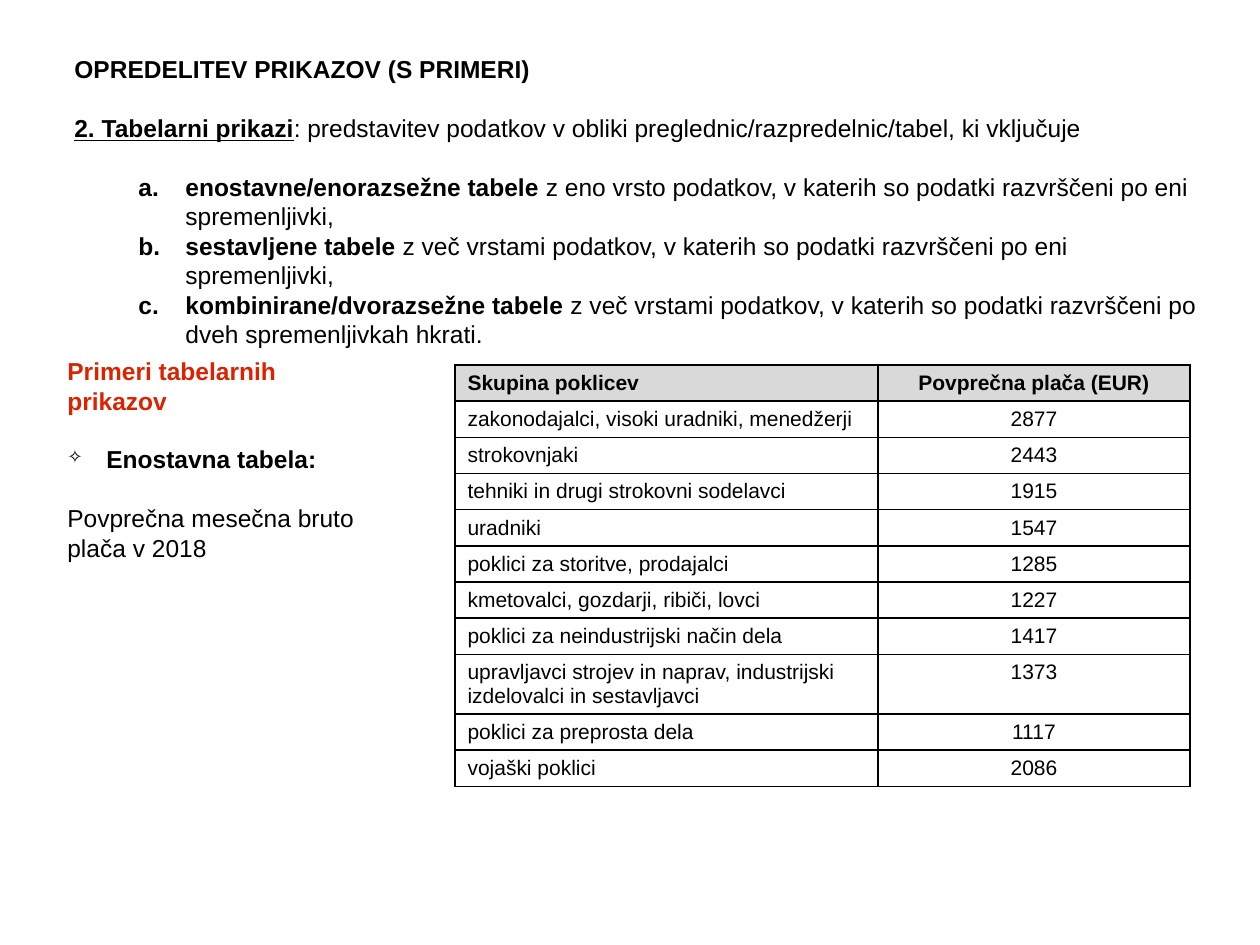
import pptx
import pptx.dml.color
import pptx.enum.text
import pptx.oxml
import pptx.oxml.ns
import pptx.util

SCALE = 914400 / 126  # EMU in one px
BLACK = pptx.dml.color.RGBColor(0x00, 0x00, 0x00)
RED = pptx.dml.color.RGBColor(0xDC, 0x23, 0x00)
GREY = pptx.dml.color.RGBColor(0xD9, 0xD9, 0xD9)

BODY = {"name": "Arial", "size": pptx.util.Pt(14), "bold": False}
STRONG = {**BODY, "bold": True}
UNDERLINED = {**STRONG, "underline": True}
CELL = {**BODY, "size": pptx.util.Pt(12)}
HEADER = {**CELL, "bold": True}
LINE_GAP = pptx.util.Pt(16.8)

LETTERS = ['<a:buFont {ns} typeface="+mj-lt"/>', '<a:buAutoNum {ns} type="alphaLcPeriod"/>']
STAR = ['<a:buSzPct {ns} val="75000"/>', '<a:buChar {ns} char="✧"/>']

KINDS = [
    ("enostavne/enorazsežne tabele ",
     "z eno vrsto podatkov, v katerih so podatki razvrščeni po eni spremenljivki,"),
    ("sestavljene tabele ",
     "z več vrstami podatkov, v katerih so podatki razvrščeni po eni spremenljivki,"),
    ("kombinirane/dvorazsežne tabele",
     " z več vrstami podatkov, v katerih so podatki razvrščeni po dveh spremenljivkah hkrati."),
]
SALARIES = [
    ("Skupina poklicev", "Povprečna plača (EUR)"),
    ("zakonodajalci, visoki uradniki, menedžerji", "2877"),
    ("strokovnjaki", "2443"),
    ("tehniki in drugi strokovni sodelavci", "1915"),
    ("uradniki", "1547"),
    ("poklici za storitve, prodajalci", "1285"),
    ("kmetovalci, gozdarji, ribiči, lovci", "1227"),
    ("poklici za neindustrijski način dela", "1417"),
    ("upravljavci strojev in naprav, industrijski izdelovalci in sestavljavci", "1373"),
    ("poklici za preprosta dela", "1117"),
    ("vojaški poklici", "2086"),
]


def px(length):
    return pptx.util.Emu(round(length * SCALE))


def xml(template):
    return pptx.oxml.parse_xml(template.format(ns=pptx.oxml.ns.nsdecls("a")))


def write(paragraph, text, style, color=BLACK):
    run = paragraph.add_run()
    run.text = text
    for attribute, value in style.items():
        setattr(run.font, attribute, value)
    run.font.color.rgb = color


def add_frame(slide, box):
    frame = slide.shapes.add_textbox(*map(px, box)).text_frame
    frame.word_wrap = True
    frame.auto_size = pptx.enum.text.MSO_AUTO_SIZE.SHAPE_TO_FIT_TEXT
    return frame


def add_paragraph(frame, gap_before=False):
    paragraph = frame.add_paragraph()
    if gap_before:
        paragraph.space_before = LINE_GAP
    return paragraph


def add_bullet(paragraph, marker, margin, hanging):
    properties = paragraph._p.get_or_add_pPr()
    properties.set("marL", str(px(margin)))
    properties.set("indent", str(-px(hanging)))
    for part in marker:
        properties.append(xml(part))


def add_definitions(slide, box):
    frame = add_frame(slide, box)
    write(frame.paragraphs[0], "OPREDELITEV PRIKAZOV (S PRIMERI)", STRONG)
    intro = add_paragraph(frame, gap_before=True)
    write(intro, "2. Tabelarni prikazi", UNDERLINED)
    write(intro, ": predstavitev podatkov v obliki preglednic/razpredelnic/tabel, ki vključuje", BODY)
    # Lettered kinds of table
    for index, (term, meaning) in enumerate(KINDS):
        kind = add_paragraph(frame, gap_before=index == 0)
        kind.level = 1
        add_bullet(kind, LETTERS, 111, 47)
        write(kind, term, STRONG)
        write(kind, meaning, BODY)


def add_example(slide, box):
    frame = add_frame(slide, box)
    write(frame.paragraphs[0], "Primeri tabelarnih prikazov", STRONG, RED)
    example = add_paragraph(frame, gap_before=True)
    add_bullet(example, STAR, 39, 39)
    write(example, "Enostavna tabela:", STRONG)
    write(add_paragraph(frame, gap_before=True), "Povprečna mesečna bruto plača v 2018", BODY)


def add_borders(cell):
    properties = cell._tc.get_or_add_tcPr()
    for side in "LRTB":
        properties.append(xml(
            f'<a:ln{side} {{ns}} w="12700"><a:solidFill><a:srgbClr val="{BLACK}"/>'
            f'</a:solidFill></a:ln{side}>'))


def add_salaries(slide, box):
    table = slide.shapes.add_table(len(SALARIES), 2, *map(px, box)).table
    table.first_row = table.horz_banding = False
    for column, width in zip(table.columns, (423, box[2] - 423)):
        column.width = px(width)
    for index, (row, texts) in enumerate(zip(table.rows, SALARIES)):
        row.height = px(59 if len(texts[0]) > 45 else 36)
        for cell, text in zip(row.cells, texts):
            add_borders(cell)
            if index == 0:
                cell.fill.solid()
                cell.fill.fore_color.rgb = GREY
            else:
                cell.fill.background()
            write(cell.text_frame.paragraphs[0], text, CELL if index else HEADER)
        row.cells[1].text_frame.paragraphs[0].alignment = pptx.enum.text.PP_ALIGN.CENTER


def main():
    deck = pptx.Presentation()
    deck.slide_width, deck.slide_height = px(1260), px(945)
    slide = deck.slides.add_slide(deck.slide_layouts[6])
    add_salaries(slide, (455, 365, 735, 419))
    add_definitions(slide, (62, 48, 1173, 280))
    add_example(slide, (55, 350, 340, 190))
    deck.save("out.pptx")


if __name__ == "__main__":
    main()
